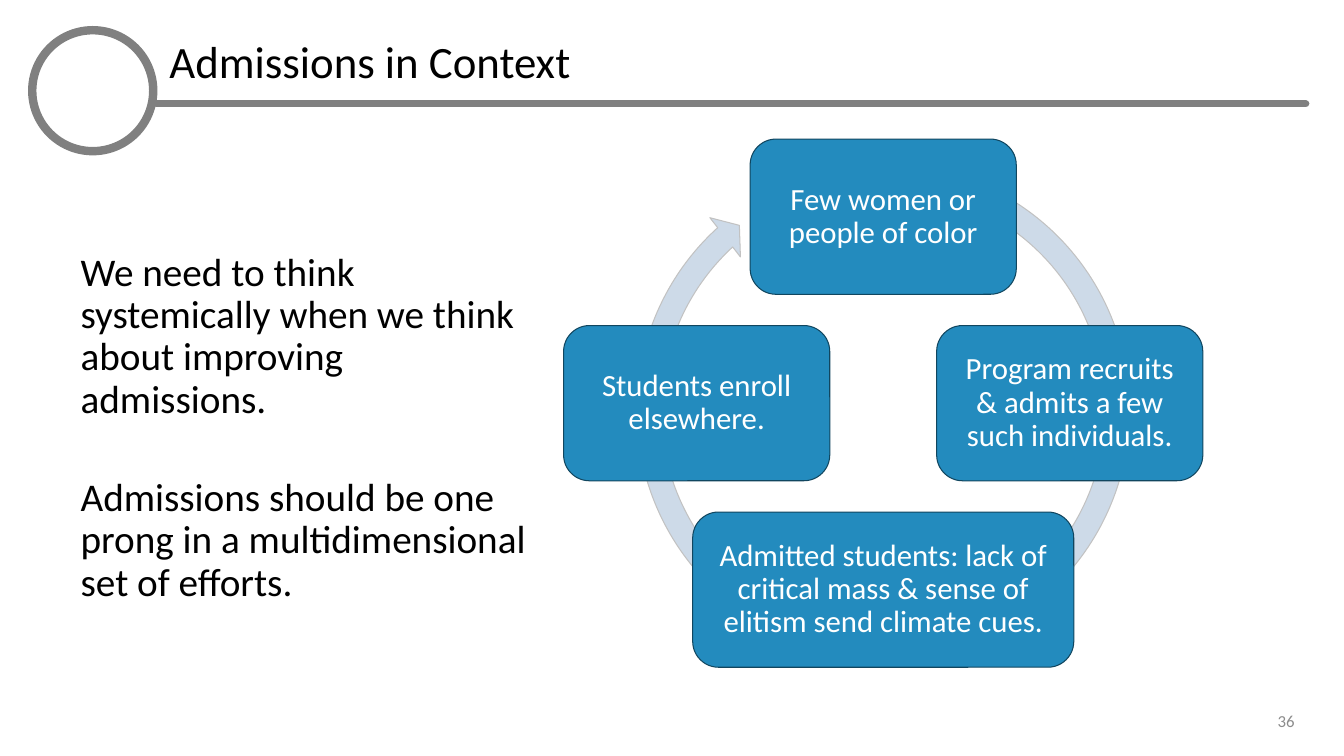
from lxml import etree
from pptx import Presentation
from pptx.dml.color import RGBColor
from pptx.enum.shapes import MSO_CONNECTOR, MSO_SHAPE
from pptx.enum.text import MSO_ANCHOR, MSO_AUTO_SIZE, PP_ALIGN
from pptx.oxml.ns import qn
from pptx.util import Inches, Pt

STRAIGHT = MSO_CONNECTOR.STRAIGHT
ELLIPSE = MSO_SHAPE.OVAL
ROUNDED = MSO_SHAPE.ROUNDED_RECTANGLE
CIRCULAR_ARROW = MSO_SHAPE.CIRCULAR_ARROW
MIDDLE = MSO_ANCHOR.MIDDLE
NO_AUTOFIT = MSO_AUTO_SIZE.NONE
LEFT, CENTER, RIGHT = PP_ALIGN.LEFT, PP_ALIGN.CENTER, PP_ALIGN.RIGHT


def color(value):
    return RGBColor.from_string(value)


def write(shape, paragraphs, size, ink, align, **formats):
    frame = shape.text_frame
    frame_formats = {"word_wrap": True, "auto_size": NO_AUTOFIT, "vertical_anchor": MIDDLE}
    for name, value in frame_formats.items():
        setattr(frame, name, value)
    for index, text in enumerate(paragraphs):
        para = frame.add_paragraph() if index else frame.paragraphs[0]
        for name, value in {"alignment": align, **formats}.items():
            setattr(para, name, value)
        span = para.add_run()
        span.text = text
        for name, value in {"name": "Calibri", "size": Pt(size), "bold": False}.items():
            setattr(span.font, name, value)
        span.font.color.rgb = color(ink)


deck = Presentation()
deck.slide_width, deck.slide_height = Inches(13.33), Inches(7.5)
page = deck.slides.add_slide(deck.slide_layouts[1])
shapes = page.shapes

ring = shapes.add_shape(ELLIPSE, Inches(0.32), Inches(0.3), Inches(1.2), Inches(1.2))
ring.shadow.inherit = False
ring.fill.background()
ring.line.color.rgb = color("808080")
ring.line.width = Pt(6)

rule = shapes.add_connector(STRAIGHT, Inches(1.55), Inches(1.03), Inches(12.95), Inches(1.03))
rule.line.color.rgb = color("808080")
rule.line.width = Pt(5.25)
rule_properties = rule._element.spPr
rule_properties.get_or_add_ln().set("cap", "rnd")
etree.SubElement(rule_properties, qn("a:effectLst"))

title, body = shapes.title, page.placeholders[1]
for holder, place in ((title, (1.58, 0.3, 10.17, 0.66)), (body, (0.7, 1.76, 4.64, 4.98))):
    holder.left, holder.top, holder.width, holder.height = map(Inches, place)

write(title, ["Admissions in Context"], 32, "000000", LEFT, line_spacing=0.9)
write(
    body,
    [
        "We need to think systemically when we think about improving admissions.",
        "Admissions should be one prong in a multidimensional set of efforts.",
    ],
    28, "000000", LEFT, line_spacing=0.9, space_before=Pt(10),
)
body.text_frame.paragraphs[1].space_before = Pt(40)
for para in body.text_frame.paragraphs:
    properties = para._p.get_or_add_pPr()
    properties.set("marL", "0")
    properties.set("indent", "0")
    etree.SubElement(properties, qn("a:buNone"))

cycle = shapes.add_shape(CIRCULAR_ARROW, Inches(6.19), Inches(1.5), Inches(5.14), Inches(5.14))
cycle.shadow.inherit = False
cycle.fill.solid()
cycle.fill.fore_color.rgb = color("CDDAE8")
cycle.line.color.rgb = color("C2C2C2")
cycle.line.width = Pt(0.75)
for index, value in enumerate((0.047, 2.729, 136.545, 174.96, 0.048)):
    cycle.adjustments[index] = value

center_x, center_y, step, box_height = 8.76, 4, 1.85, 1.54
stages = (
    ("Few women or people of color", 0, -1, 2.64),
    ("Program recruits & admits a few such individuals.", 1, 0, 2.64),
    ("Admitted students: lack of critical mass & sense of elitism send climate cues.", 0, 1, 3.78),
    ("Students enroll elsewhere.", -1, 0, 2.64),
)
for text, across, down, box_width in stages:
    left = center_x + across * step - box_width / 2
    top = center_y + down * step - box_height / 2
    box = shapes.add_shape(ROUNDED, Inches(left), Inches(top), Inches(box_width), Inches(box_height))
    box.shadow.inherit = False
    box.fill.solid()
    box.fill.fore_color.rgb = color("238BBE")
    box.line.color.rgb = color("11465F")
    box.line.width = Pt(0.75)
    for side in ("left", "top", "right", "bottom"):
        setattr(box.text_frame, f"margin_{side}", Inches(0.09))
    write(box, [text], 22, "FFFFFF", CENTER, line_spacing=0.9)

page_number = shapes.add_textbox(Inches(9.42), Inches(6.95), Inches(3.52), Inches(0.4))
write(page_number, ["36"], 12, "8C8C8C", RIGHT)

deck.save("out.pptx")
